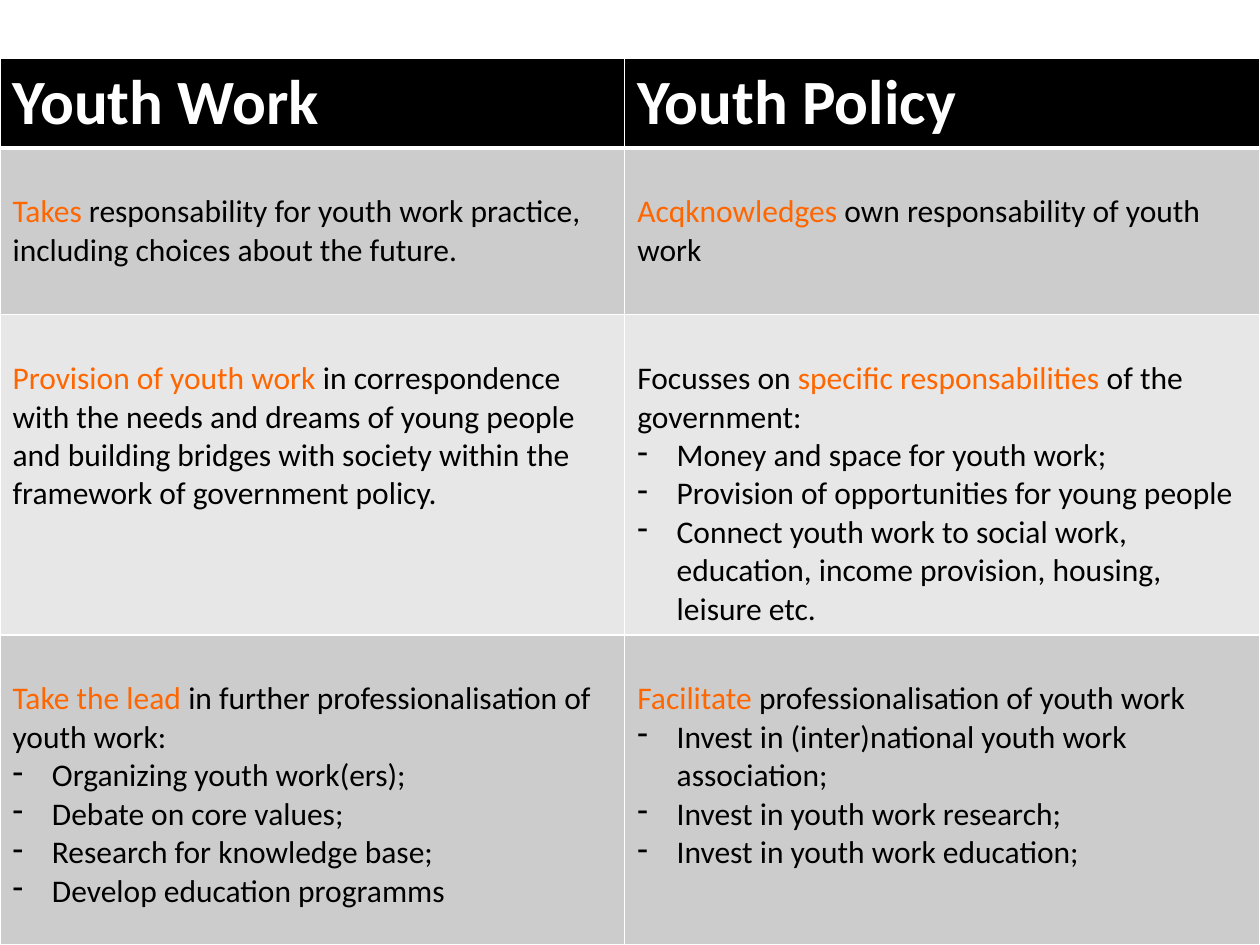
from dataclasses import dataclass

from lxml import etree
from pptx import Presentation
from pptx.dml.color import RGBColor
from pptx.oxml.ns import qn
from pptx.util import Pt

COLORS = {
    "header": "000000",
    "dark_band": "CCCCCC",
    "light_band": "E7E7E7",
    "border": "FFFFFF",
    "heading": "FFFFFF",
    "body": "000000",
    "accent": "FF6600",
}
FONT = "Calibri"
COLUMN_WIDTHS = (357, 363)
ROW_HEIGHTS = (51.2, 95.4, 183, 177.2)
TABLE_TOP = 33.2
BODY_TOP_MARGIN = 25.6
BULLET_INDENT = 22.5


@dataclass(frozen=True)
class Span:
    text: str
    color: str = "body"


@dataclass(frozen=True)
class Topic:
    lead: tuple[Span, ...]
    points: tuple[str, ...] = ()


HEADINGS = ("Youth Work", "Youth Policy")
TOPICS = (
    (
        Topic((
            Span("Takes ", "accent"),
            Span("responsability for youth work practice, including choices about the future."),
        )),
        Topic((
            Span("Acqknowledges ", "accent"),
            Span("own responsability of youth work"),
        )),
    ),
    (
        Topic((
            Span("Provision of youth work ", "accent"),
            Span("in correspondence with the needs and dreams of young people "
                 "and building bridges with society within the framework of government policy."),
        )),
        Topic(
            (
                Span("Focusses on "),
                Span("specific responsabilities ", "accent"),
                Span("of the government:"),
            ),
            (
                "Money and space for youth work;",
                "Provision of opportunities for young people",
                "Connect youth work to social work, education, income provision, housing, leisure etc.",
            ),
        ),
    ),
    (
        Topic(
            (
                Span("Take the lead ", "accent"),
                Span("in further professionalisation of youth work:"),
            ),
            (
                "Organizing youth work(ers);",
                "Debate on core values;",
                "Research for knowledge base;",
                "Develop education programms",
            ),
        ),
        Topic(
            (
                Span("Facilitate ", "accent"),
                Span("professionalisation of youth work"),
            ),
            (
                "Invest in (inter)national youth work association;",
                "Invest in youth work research;",
                "Invest in youth work education;",
            ),
        ),
    ),
)


def add_text(para, text: str, *, size: float = 18, color: str = "body", bold: bool = False) -> None:
    run = para.add_run()
    run.text = text
    run.font.name = FONT
    run.font.size = Pt(size)
    run.font.bold = bold
    run.font.color.rgb = RGBColor.from_string(COLORS[color])


def add_bullet(para) -> None:
    properties = para._p.get_or_add_pPr()
    properties.set("marL", str(Pt(BULLET_INDENT)))
    properties.set("indent", str(-Pt(BULLET_INDENT)))
    etree.SubElement(properties, qn("a:buFontTx"))
    etree.SubElement(properties, qn("a:buChar"), char="-")


def style_cell(cell, fill: str, *, top_width: float = 1, bottom_width: float = 1) -> None:
    cell.fill.solid()
    cell.fill.fore_color.rgb = RGBColor.from_string(COLORS[fill])
    properties = cell._tc.get_or_add_tcPr()
    widths = {"a:lnL": 1, "a:lnR": 1, "a:lnT": top_width, "a:lnB": bottom_width}
    for position, (tag, width) in enumerate(widths.items()):
        line = etree.Element(qn(tag), w=str(Pt(width)))
        solid = etree.SubElement(line, qn("a:solidFill"))
        etree.SubElement(solid, qn("a:srgbClr"), val=COLORS["border"])
        properties.insert(position, line)


def fill_topic(cell, topic: Topic) -> None:
    cell.margin_top = Pt(BODY_TOP_MARGIN)
    frame = cell.text_frame
    for span in topic.lead:
        add_text(frame.paragraphs[0], span.text, color=span.color)
    for point in topic.points:
        para = frame.add_paragraph()
        add_bullet(para)
        add_text(para, point)


def main() -> None:
    deck = Presentation()
    deck.slide_width, deck.slide_height = Pt(720), Pt(540)
    page = deck.slides.add_slide(deck.slide_layouts[6])
    table = page.shapes.add_table(
        len(ROW_HEIGHTS), len(COLUMN_WIDTHS),
        Pt(0), Pt(TABLE_TOP), Pt(sum(COLUMN_WIDTHS)), Pt(sum(ROW_HEIGHTS)),
    ).table
    for column, width in zip(table.columns, COLUMN_WIDTHS):
        column.width = Pt(width)
    for row, height in zip(table.rows, ROW_HEIGHTS):
        row.height = Pt(height)

    for column, heading in enumerate(HEADINGS):
        cell = table.cell(0, column)
        style_cell(cell, "header", bottom_width=3)
        add_text(cell.text_frame.paragraphs[0], heading, size=36, color="heading", bold=True)

    for row, topics in enumerate(TOPICS, start=1):
        band = "dark_band" if row % 2 else "light_band"
        for column, topic in enumerate(topics):
            cell = table.cell(row, column)
            style_cell(cell, band, top_width=3 if row == 1 else 1)
            fill_topic(cell, topic)

    deck.save("out.pptx")


if __name__ == "__main__":
    main()
